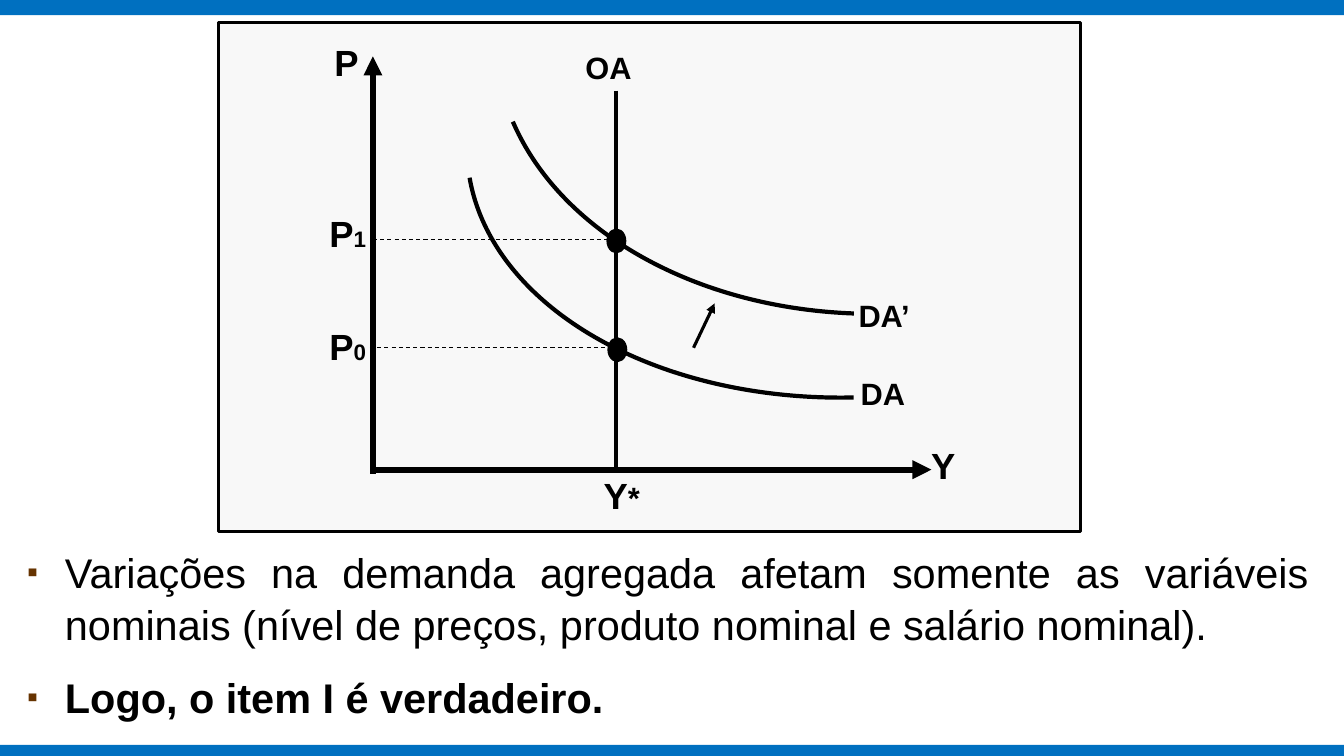
from lxml import etree
from pptx import Presentation
from pptx.dml.color import RGBColor
from pptx.enum.dml import MSO_LINE
from pptx.enum.shapes import MSO_CONNECTOR, MSO_SHAPE
from pptx.enum.text import MSO_ANCHOR, MSO_AUTO_SIZE, PP_ALIGN
from pptx.oxml.ns import qn
from pptx.util import Pt

RECT, OVAL, ARC = MSO_SHAPE.RECTANGLE, MSO_SHAPE.OVAL, MSO_SHAPE.ARC
STRAIGHT = MSO_CONNECTOR.STRAIGHT
DASH = MSO_LINE.DASH
TOP = MSO_ANCHOR.TOP
NOFIT = MSO_AUTO_SIZE.NONE
LEFT, JUST = PP_ALIGN.LEFT, PP_ALIGN.JUSTIFY

FONT, INK, BLUE, PANEL, BROWN = "Arial", "000000", "0070C0", "F8F8F8", "663300"
WIDE, HIGH = 960, 540

# Content; all lengths in points
POINTS = [
    ("Variações na demanda agregada afetam somente as variáveis nominais "
     "(nível de preços, produto nominal e salário nominal).", False),
    ("Logo, o item I é verdadeiro.", True),
]
BARS = [(-2.2, 13), (532, 9.4)]  # top, height
FRAME = (156.2, 15.8, 615.6, 363.6)
ORIGIN_X, ORIGIN_Y, FULL_X = 266.4, 335.5, 439.9
LINES = [  # start, end, width, arrow, dashed
    ((ORIGIN_X, 338.4), (ORIGIN_X, 40.3), 4.5, True, False),
    ((ORIGIN_X, ORIGIN_Y), (665.3, ORIGIN_Y), 4.5, True, False),
    ((FULL_X, 64.8), (FULL_X, ORIGIN_Y), 3, False, False),
    ((ORIGIN_X, 171.4), (FULL_X, 171.4), 0.75, False, True),
    ((264.2, 248.4), (437.8, 248.4), 0.75, False, True),
    ((495.4, 248.4), (510.5, 216.7), 2.25, True, False),
]
CURVES = [  # box, arc adjustments
    ((333.4, -87.8, 558, 371.5), (164.25, 214.16)),
    ((353.5, -184.3, 558, 408.2), (167.53, 209.25)),
]
DOTS = [(434.9, 241.9), (434.2, 164.2)]
LABELS = [  # left, top, width, runs of text and size
    (231.8, 25.2, 22.3, [("P", 26)]),
    (658.1, 313.2, 24.5, [("Y", 26)]),
    (411.1, 31, 60.5, [("OA", 22)]),
    (424.1, 334.1, 49.7, [("Y", 26), ("*", 22)]),
    (607.7, 264.2, 64.8, [("DA", 22)]),
    (606.2, 208.1, 64.8, [("DA’", 22)]),
    (228.2, 228.2, 64.8, [("P", 26), ("0", 16)]),
    (228.2, 147.6, 64.8, [("P", 26), ("1", 16)]),
]


def color(code):
    return RGBColor.from_string(code)


def write(para, text, size=22, bold=True, align=LEFT):
    para.alignment = align
    run = para.add_run()
    run.text = text
    font = run.font
    font.name, font.size, font.bold = FONT, Pt(size), bold
    font.color.rgb = color(INK)


def place(item, box):
    item.left, item.top, item.width, item.height = map(Pt, box)


def shape(slide, kind, box, fill=None, line=None, width=2):
    item = slide.shapes.add_shape(kind, *map(Pt, box))
    item.shadow.inherit = False
    if fill:
        item.fill.solid()
        item.fill.fore_color.rgb = color(fill)
    else:
        item.fill.background()
    if line:
        item.line.color.rgb = color(line)
        item.line.width = Pt(width)
    else:
        item.line.fill.background()
    return item


def stroke(slide, start, end, width, arrow, dashed):
    item = slide.shapes.add_connector(STRAIGHT, *map(Pt, start + end))
    item.line.color.rgb = color(INK)
    item.line.width = Pt(width)
    if dashed:
        item.line.dash_style = DASH
    if arrow:
        tail = etree.SubElement(item.line._get_or_add_ln(), qn("a:tailEnd"))
        tail.set("type", "triangle")
    etree.SubElement(item._element.spPr, qn("a:effectLst"))


def bullet(para):
    props = para._p.get_or_add_pPr()
    props.set("marL", str(Pt(27)))
    props.set("indent", str(-Pt(27)))
    tint = etree.SubElement(props, qn("a:buClr"))
    etree.SubElement(tint, qn("a:srgbClr")).set("val", BROWN)
    etree.SubElement(props, qn("a:buSzPct")).set("val", "75000")
    etree.SubElement(props, qn("a:buFont")).set("typeface", FONT)
    etree.SubElement(props, qn("a:buChar")).set("char", "▪")


def main():
    deck = Presentation()
    deck.slide_width, deck.slide_height = Pt(WIDE), Pt(HIGH)
    slide = deck.slides.add_slide(deck.slide_layouts[1])
    title = slide.shapes.title._element
    title.getparent().remove(title)

    # Bulleted text
    body = slide.placeholders[1]
    place(body, (12.2, 385.2, 931, 126))
    frame = body.text_frame
    frame.auto_size, frame.vertical_anchor = NOFIT, TOP
    for i, (text, bold) in enumerate(POINTS):
        para = frame.add_paragraph() if i else frame.paragraphs[0]
        para.line_spacing, para.space_before = 1.05, Pt(15)
        write(para, text, size=29.6, bold=bold, align=JUST)
        bullet(para)

    # Edge bars and chart panel
    for top, height in BARS:
        shape(slide, RECT, (0, top, WIDE, height), fill=BLUE)
    shape(slide, RECT, FRAME, fill=PANEL, line=INK)

    # Axes, supply line, guides and shift arrow
    for line in LINES:
        stroke(slide, *line)

    # Demand curves and their crossings with supply
    for box, ends in CURVES:
        arc = shape(slide, ARC, box, line=INK, width=3)
        arc.rotation = 177.1
        arc.adjustments[0], arc.adjustments[1] = ends
    for left, top in DOTS:
        shape(slide, OVAL, (left, top, 12.2, 15.8), fill=INK, line=INK)

    # Labels
    for left, top, width, runs in LABELS:
        box = slide.shapes.add_textbox(*map(Pt, (left, top, width, 39.6)))
        box.text_frame.word_wrap = True
        for text, size in runs:
            write(box.text_frame.paragraphs[0], text, size=size)

    deck.save("out.pptx")


if __name__ == "__main__":
    main()
